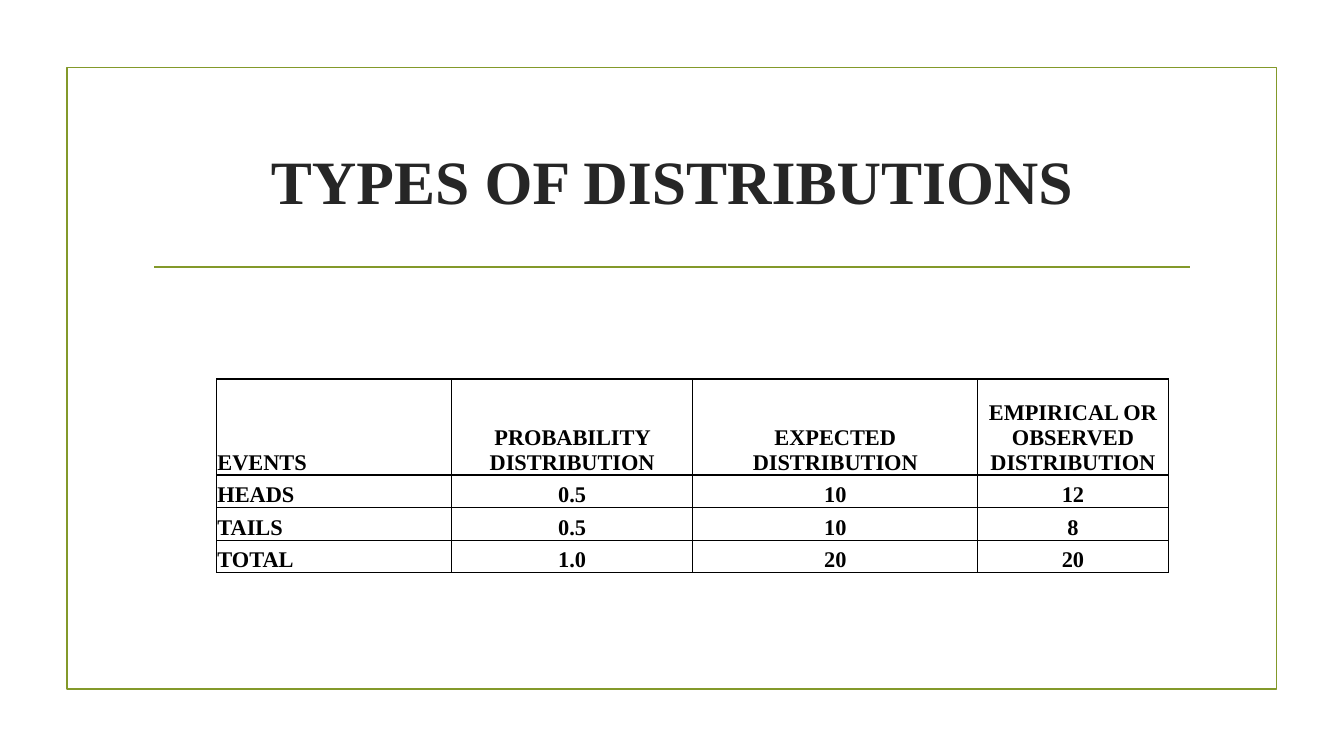
"""Build a slide with a table comparing types of distributions."""
from lxml.etree import SubElement
from pptx import Presentation
from pptx.dml.color import RGBColor
from pptx.enum.shapes import MSO_CONNECTOR, MSO_SHAPE
from pptx.enum.text import MSO_ANCHOR as Anchor, PP_ALIGN as Align
from pptx.oxml.ns import qn
from pptx.util import Cm, Pt

GREEN = RGBColor(0x83, 0x99, 0x2A)
DARK = RGBColor(0x26, 0x26, 0x26)
BLACK = RGBColor(0, 0, 0)
FONT = "Times New Roman"


def write_text(frame, text, size, color, align):
    frame.word_wrap = True
    paragraph = frame.paragraphs[0]
    paragraph.alignment = align
    run = paragraph.add_run()
    run.text = text
    run.font.name = FONT
    run.font.size = Pt(size)
    run.font.bold = True
    run.font.color.rgb = color


def add_borders(cell):
    properties = cell._tc.get_or_add_tcPr()
    for side in ("a:lnL", "a:lnR", "a:lnT", "a:lnB"):
        line = SubElement(properties, qn(side), w=str(Pt(1)))
        fill = SubElement(line, qn("a:solidFill"))
        SubElement(fill, qn("a:srgbClr"), val=str(BLACK))


presentation = Presentation()
presentation.slide_width = Cm(33.87)
presentation.slide_height = Cm(19.05)
slide = presentation.slides.add_slide(presentation.slide_layouts[6])

border = slide.shapes.add_shape(MSO_SHAPE.RECTANGLE, Cm(1.69), Cm(1.7), Cm(30.48), Cm(15.67))
border.shadow.inherit = False
border.fill.background()
border.line.color.rgb = GREEN
border.line.width = Pt(1.25)

divider = slide.shapes.add_connector(MSO_CONNECTOR.STRAIGHT, Cm(3.89), Cm(6.73), Cm(30), Cm(6.73))
divider.line.color.rgb = GREEN
divider.line.width = Pt(1.25)
SubElement(divider._element.spPr, qn("a:effectLst"))

title = slide.shapes.add_textbox(Cm(3.61), Cm(2.72), Cm(26.67), Cm(3.63))
title.text_frame.vertical_anchor = Anchor.MIDDLE
write_text(title.text_frame, "TYPES OF DISTRIBUTIONS", 44, DARK, Align.CENTER)

rows = [
    ("EVENTS", "PROBABILITY DISTRIBUTION", "EXPECTED DISTRIBUTION", "EMPIRICAL OR OBSERVED DISTRIBUTION"),
    ("HEADS", "0.5", "10", "12"),
    ("TAILS", "0.5", "10", "8"),
    ("TOTAL", "1.0", "20", "20"),
]
column_widths = [5.92, 6.08, 7.18, 4.8]
row_heights = [2.42, 0.82, 0.82, 0.82]

table = slide.shapes.add_table(
    len(rows), len(column_widths), Cm(5.46), Cm(9.55),
    Cm(sum(column_widths)), Cm(sum(row_heights))).table
table.first_row = False
table.horz_banding = False
for column, width in zip(table.columns, column_widths):
    column.width = Cm(width)
for row, height, texts in zip(table.rows, row_heights, rows):
    row.height = Cm(height)
    for index, (cell, text) in enumerate(zip(row.cells, texts)):
        cell.margin_left = cell.margin_right = cell.margin_top = Cm(0.02)
        cell.margin_bottom = 0
        cell.vertical_anchor = Anchor.BOTTOM
        add_borders(cell)
        cell.fill.background()
        write_text(cell.text_frame, text, 16, BLACK, Align.CENTER if index else Align.LEFT)

presentation.save("out.pptx")
